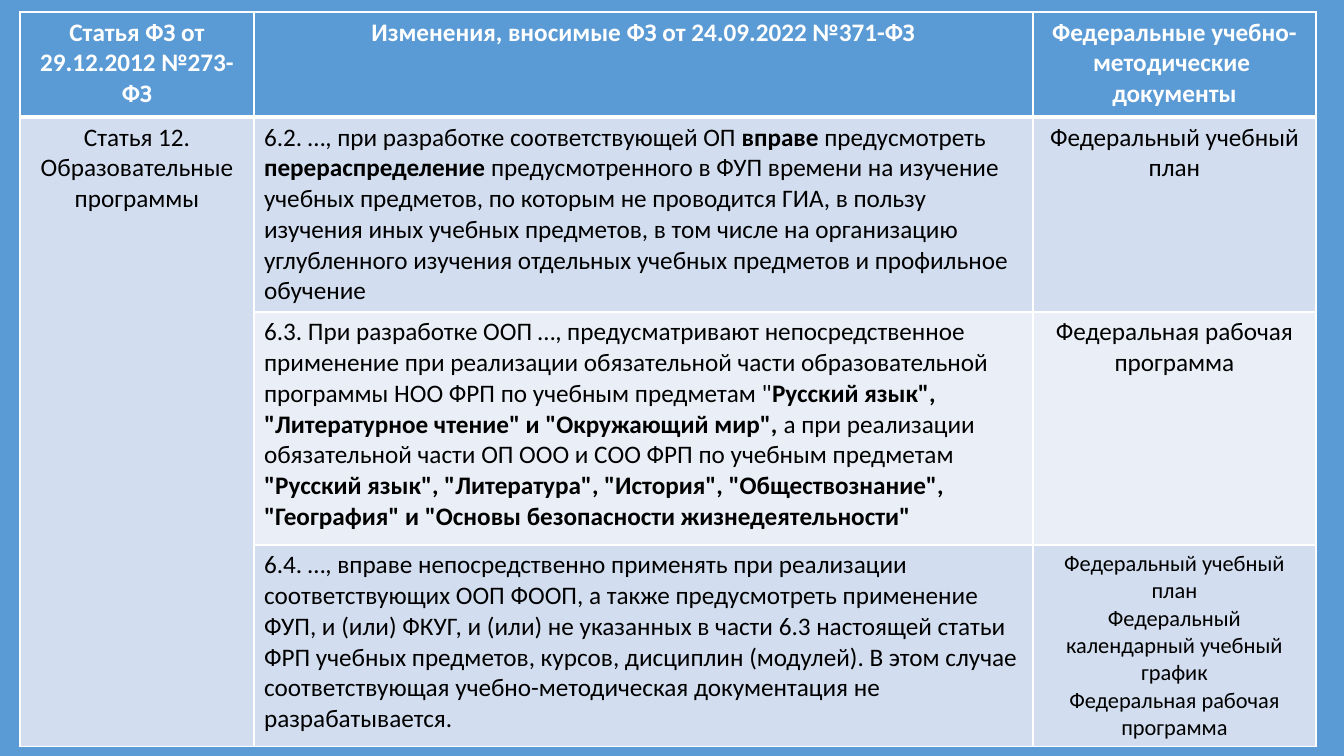
from lxml.etree import SubElement
from pptx import Presentation
from pptx.dml.color import RGBColor
from pptx.enum.shapes import MSO_SHAPE
from pptx.enum.text import PP_ALIGN
from pptx.oxml.ns import qn
from pptx.util import Emu, Pt


class Theme:
    font = "Calibri"
    blue = RGBColor.from_string("5B9BD5")
    white = RGBColor.from_string("FFFFFF")
    black = RGBColor.from_string("000000")
    bands = [RGBColor.from_string("D2DEEF"), RGBColor.from_string("EAEFF7")]
    text = Pt(18)
    small = Pt(16)
    line = Pt(1)
    header_line = Pt(3)


def px(n):
    return Emu(round(n * 914400 / 100.8))


def add_border(cell, side, width):
    ln = SubElement(cell._tc.get_or_add_tcPr(), qn(f"a:ln{side}"), w=str(width))
    fill = SubElement(ln, qn("a:solidFill"))
    SubElement(fill, qn("a:srgbClr"), val=str(Theme.white))


# Slide and background
prs = Presentation()
prs.slide_width, prs.slide_height = px(1344), px(756)
s = prs.slides.add_slide(prs.slide_layouts[6])
s.background.fill.solid()
s.background.fill.fore_color.rgb = Theme.blue

# White panel behind the table
panel = s.shapes.add_shape(MSO_SHAPE.RECTANGLE, px(25), px(27), px(1292), px(703))
panel.shadow.inherit = False
panel.fill.solid()
panel.fill.fore_color.rgb = Theme.white
panel.line.fill.background()

# Cells hold paragraphs, paragraphs hold runs of (text, bold)
rows = [
    [
        [[("Статья ФЗ от 29.12.2012 №273-ФЗ", True)]],
        [[("Изменения, вносимые ФЗ от 24.09.2022 №371-ФЗ", True)]],
        [[("Федеральные учебно-методические ", True)], [("документы", True)]],
    ],
    [
        [[("Статья 12. Образовательные программы", False)]],
        [[
            ("6.2. …, при разработке соответствующей ОП ", False),
            ("вправе", True),
            (" предусмотреть ", False),
            ("перераспределение", True),
            (" предусмотренного в ФУП времени на изучение учебных предметов, "
             "по которым не проводится ГИА, в пользу изучения иных учебных "
             "предметов, в том числе на организацию углубленного изучения "
             "отдельных учебных предметов и профильное обучение", False),
        ]],
        [[("Федеральный учебный план", False)]],
    ],
    [
        [],
        [[
            ("6.3. При разработке ООП …, предусматривают непосредственное "
             "применение при реализации обязательной части образовательной "
             'программы НОО ФРП по учебным предметам "', False),
            ('Русский язык", "Литературное чтение" и "Окружающий мир", ', True),
            ("а при реализации обязательной части ОП ООО и СОО ФРП по учебным "
             "предметам ", False),
            ('"Русский язык", "Литература", "История", "Обществознание", '
             '"География" и "Основы безопасности жизнедеятельности"', True),
        ]],
        [[("Федеральная рабочая программа", False)]],
    ],
    [
        [],
        [[
            ("6.4. …, вправе непосредственно применять при реализации "
             "соответствующих ООП ФООП, а также предусмотреть применение ФУП, "
             "и (или) ФКУГ, и (или) не указанных в части 6.3 настоящей статьи "
             "ФРП учебных предметов, курсов, дисциплин (модулей). В этом случае "
             "соответствующая учебно-методическая документация не "
             "разрабатывается.", False),
        ]],
        [
            [("Федеральный учебный план", False)],
            [("Федеральный календарный учебный график", False)],
            [("Федеральная рабочая программа", False)],
        ],
    ],
]

# Table grid
col_widths = [234, 779, 283]
row_heights = [105, 195, 233, 201]
table = s.shapes.add_table(len(rows), len(col_widths), px(20), px(12),
                           px(sum(col_widths)), px(sum(row_heights))).table
for col, width in zip(table.columns, col_widths):
    col.width = px(width)
for row, height in zip(table.rows, row_heights):
    row.height = px(height)
table.cell(1, 0).merge(table.cell(3, 0))

# Borders, fills and text
for i, row in enumerate(rows):
    for j, paragraphs in enumerate(row):
        cell = table.cell(i, j)
        for side in "LRTB":
            under_header = (i, side) in [(0, "B"), (1, "T")]
            add_border(cell, side, Theme.header_line if under_header else Theme.line)
        cell.fill.solid()
        cell.fill.fore_color.rgb = Theme.bands[(i - 1) % 2] if i else Theme.blue
        tf = cell.text_frame
        for k, runs in enumerate(paragraphs):
            p = tf.add_paragraph() if k else tf.paragraphs[0]
            p.alignment = PP_ALIGN.LEFT if i and j == 1 else PP_ALIGN.CENTER
            for text, bold in runs:
                r = p.add_run()
                r.text = text
                r.font.name = Theme.font
                r.font.size = Theme.small if (i, j) == (3, 2) else Theme.text
                r.font.bold = bold
                r.font.color.rgb = Theme.black if i else Theme.white

prs.save("out.pptx")
